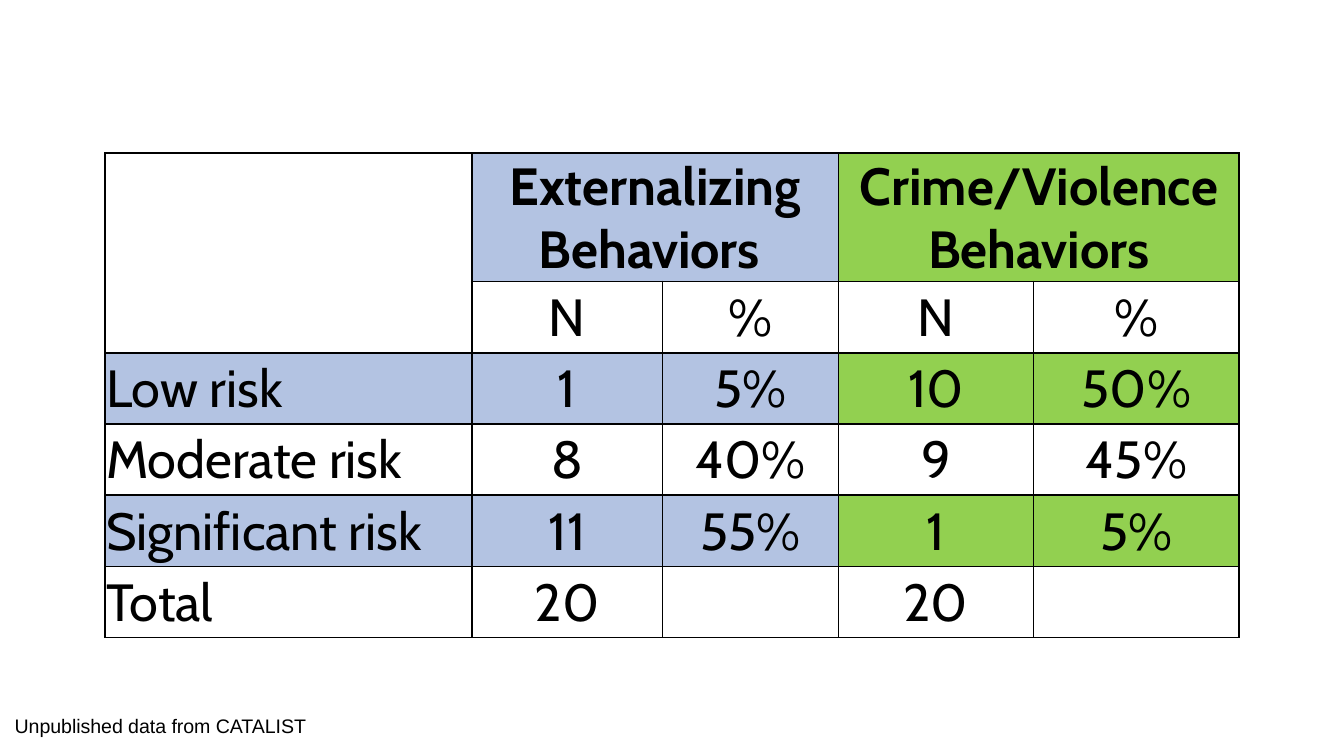
"""Build a slide with a table of risk levels for two kinds of behaviors."""
import pptx
import pptx.dml.color
import pptx.enum.text
import pptx.oxml
import pptx.oxml.ns
import pptx.util

Inches = pptx.util.Inches
Pt = pptx.util.Pt
RGBColor = pptx.dml.color.RGBColor
PP_ALIGN = pptx.enum.text.PP_ALIGN

BLACK = RGBColor(0x00, 0x00, 0x00)
BLUE = RGBColor(0xB3, 0xC3, 0xE2)
GREEN = RGBColor(0x92, 0xD0, 0x50)

COLUMN_WIDTHS = [2.73, 1.42, 1.31, 1.45, 1.53]
ROW_HEIGHTS = [0.95] + [0.53] * 5
ROWS = [
    ["", "Externalizing\nBehaviors ", "", "Crime/Violence Behaviors", ""],
    ["", "N", "%", "N", "%"],
    ["Low risk", "1", "5%", "10", "50%"],
    ["Moderate risk", "8", "40%", "9", "45%"],
    ["Significant risk", "11", "55%", "1", "5%"],
    ["Total", "20", "", "20", ""],
]
SHADED_ROWS = {0, 2, 4}
COLUMN_COLORS = [BLUE, BLUE, BLUE, GREEN, GREEN]


def add_run(paragraph, text, font_name, size, bold=False):
    run = paragraph.add_run()
    run.text = text
    run.font.name = font_name
    run.font.size = Pt(size)
    run.font.bold = bold
    run.font.color.rgb = BLACK


def add_borders(cell):
    properties = cell._tc.get_or_add_tcPr()
    for side in ("lnL", "lnR", "lnT", "lnB"):
        properties.append(pptx.oxml.parse_xml(
            f'<a:{side} {pptx.oxml.ns.nsdecls("a")} w="{Pt(1)}"><a:solidFill>'
            f'<a:srgbClr val="{BLACK}"/></a:solidFill></a:{side}>'))


presentation = pptx.Presentation()
presentation.slide_width = Inches(10)
presentation.slide_height = presentation.slide_width * 9 // 16
slide = presentation.slides.add_slide(presentation.slide_layouts[6])

table = slide.shapes.add_table(
    len(ROWS), len(COLUMN_WIDTHS), Inches(0.78), Inches(1.14),
    Inches(sum(COLUMN_WIDTHS)), Inches(sum(ROW_HEIGHTS))).table
table.first_row = False
table.horz_banding = False
for column, width in zip(table.columns, COLUMN_WIDTHS):
    column.width = Inches(width)
for row, height in zip(table.rows, ROW_HEIGHTS):
    row.height = Inches(height)

for row_index, texts in enumerate(ROWS):
    for column_index, text in enumerate(texts):
        cell = table.cell(row_index, column_index)
        cell.margin_left = cell.margin_right = cell.margin_top = Inches(0.01)
        cell.margin_bottom = 0
        cell.vertical_anchor = pptx.enum.text.MSO_ANCHOR.MIDDLE
        add_borders(cell)
        if row_index in SHADED_ROWS and (row_index, column_index) != (0, 0):
            cell.fill.solid()
            cell.fill.fore_color.rgb = COLUMN_COLORS[column_index]
        else:
            cell.fill.background()
        if not text:
            continue
        for line_index, line in enumerate(text.split("\n")):
            frame = cell.text_frame
            paragraph = frame.add_paragraph() if line_index else frame.paragraphs[0]
            paragraph.alignment = PP_ALIGN.CENTER if column_index else PP_ALIGN.LEFT
            add_run(paragraph, line, "Cabin", 28, bold=row_index == 0)

table.cell(0, 0).merge(table.cell(1, 0))
for first_column in (1, 3):
    table.cell(0, first_column).merge(table.cell(0, first_column + 1))

source_note = slide.shapes.add_textbox(
    Inches(0.06), Inches(5.26), Inches(3.87), Inches(0.28))
frame = source_note.text_frame
frame.word_wrap = True
frame.margin_left = frame.margin_right = Inches(0.05)
frame.margin_top = frame.margin_bottom = Inches(0.05)
add_run(frame.paragraphs[0], "Unpublished data from CATALIST", "Arial", 10.5)

presentation.save("out.pptx")
